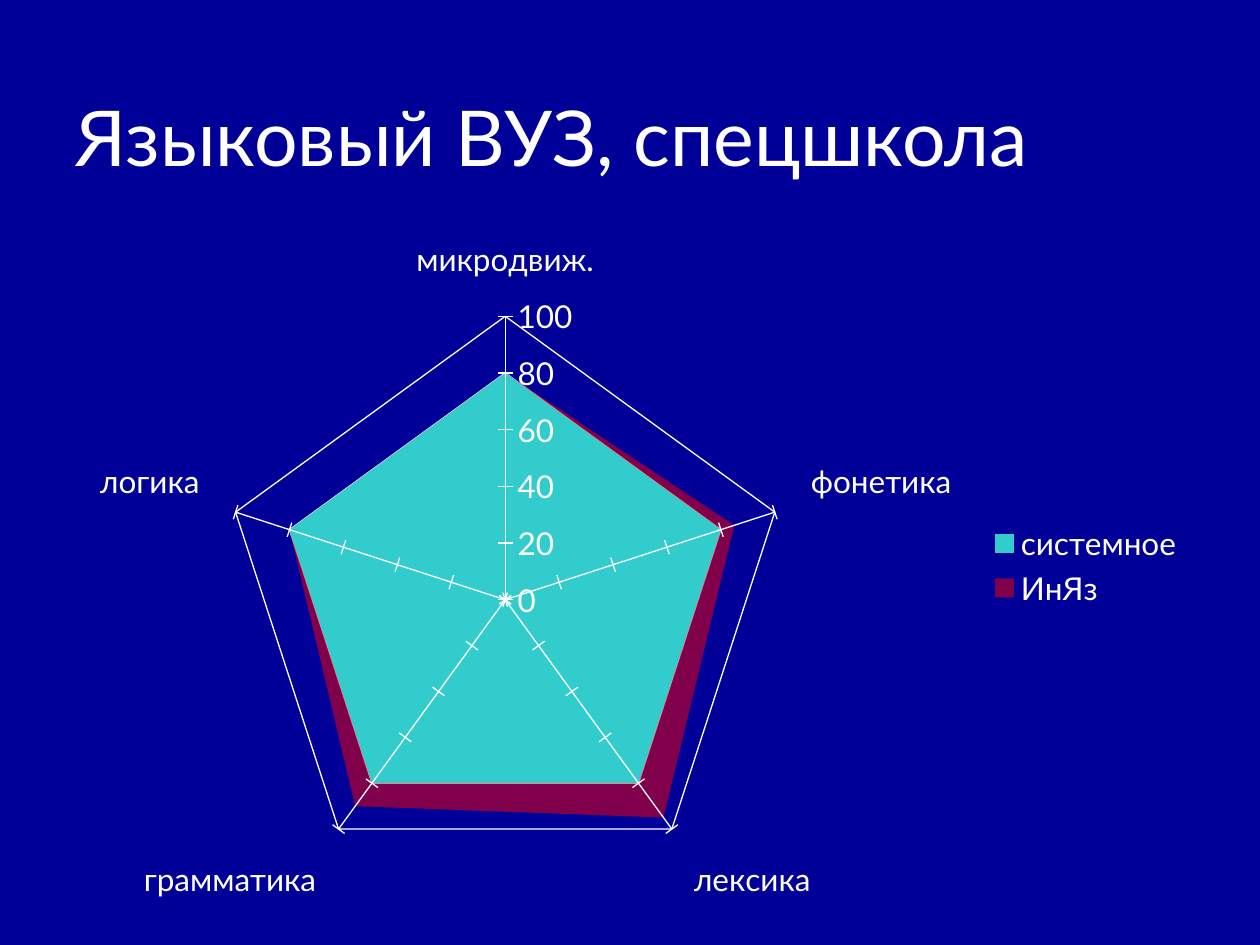
from lxml import etree
from pptx import Presentation
from pptx.chart.data import CategoryChartData
from pptx.dml.color import RGBColor
from pptx.enum.chart import XL_CHART_TYPE, XL_LEGEND_POSITION, XL_TICK_MARK
from pptx.enum.text import MSO_ANCHOR, PP_ALIGN
from pptx.oxml import parse_xml
from pptx.oxml.ns import nsdecls, qn
from pptx.util import Cm, Pt

NAVY = RGBColor(0x00, 0x00, 0x99)
WHITE = RGBColor(0xFF, 0xFF, 0xFF)
TEAL = RGBColor(0x33, 0xCC, 0xCC)
RED = RGBColor(0xFF, 0x00, 0x00)
FONT = "Lato"

CATEGORIES = ["микродвиж.", "фонетика", "лексика", "грамматика", "логика"]
# name, values, colour, opacity in percent
SERIES = [
    ("системное", (80, 80, 80, 80, 80), TEAL, 100),
    ("ИнЯз", (80, 85, 95, 90, 80), RED, 50),
]
PLOT_AREA = {"x": 0.14, "y": 0.17, "w": 0.5, "h": 0.75}


def set_font(font, size):
    for name, value in {"name": FONT, "size": Pt(size), "bold": False}.items():
        setattr(font, name, value)
    font.color.rgb = WHITE


def set_line(line):
    line.color.rgb = WHITE
    line.width = Pt(0.75)


def place(shape, box):
    for name, value in zip(("left", "top", "width", "height"), box):
        setattr(shape, name, value)


def add_title(s, box, text):
    title = s.shapes.title
    place(title, box)
    tf = title.text_frame
    tf.vertical_anchor = MSO_ANCHOR.MIDDLE
    p = tf.paragraphs[0]
    p.alignment = PP_ALIGN.LEFT
    r = p.add_run()
    r.text = text
    set_font(r.font, 44)


def set_plot_area(chart, area):
    """Fix the inner plot area as fractions of the chart."""
    plot_area = chart.plots[0]._element.getparent()
    for old in plot_area.findall(qn("c:layout")):
        plot_area.remove(old)
    edges = "".join(f'<c:{k} val="{v}"/>' for k, v in area.items())
    plot_area.insert(0, parse_xml(
        f'<c:layout {nsdecls("c")}><c:manualLayout>'
        '<c:layoutTarget val="inner"/><c:xMode val="edge"/><c:yMode val="edge"/>'
        f'{edges}</c:manualLayout></c:layout>'))


def add_radar(s, box):
    data = CategoryChartData(number_format="0")
    data.categories = CATEGORIES
    for name, values, _, _ in SERIES:
        data.add_series(name, values)
    chart = s.shapes.add_chart(XL_CHART_TYPE.RADAR_FILLED, *box, data).chart
    chart.has_title = False
    set_font(chart.font, 18)
    set_plot_area(chart, PLOT_AREA)

    # Series fills
    chart.plots[0].vary_by_categories = False
    for series, (_, _, colour, opacity) in zip(chart.plots[0].series, SERIES):
        fill = series.format.fill
        fill.solid()
        fill.fore_color.rgb = colour
        series.format.line.fill.background()
        if opacity < 100:
            clr = series._element.find(".//" + qn("a:srgbClr"))
            etree.SubElement(clr, qn("a:alpha"), val=str(opacity * 1000))

    # Axes and grid
    for axis in (chart.category_axis, chart.value_axis):
        axis.has_major_gridlines = True
        axis.major_tick_mark = XL_TICK_MARK.CROSS
        axis.minor_tick_mark = XL_TICK_MARK.NONE
        set_line(axis.format.line)
        set_line(axis.major_gridlines.format.line)
        set_font(axis.tick_labels.font, 18)
    scale = {"minimum_scale": 0, "maximum_scale": 100, "major_unit": 20}
    for name, value in scale.items():
        setattr(chart.value_axis, name, value)

    # Legend
    chart.has_legend = True
    chart.legend.position = XL_LEGEND_POSITION.RIGHT
    chart.legend.include_in_layout = False
    set_font(chart.legend.font, 18)


def main():
    prs = Presentation()
    prs.slide_width, prs.slide_height = Cm(25.4), Cm(19.05)
    s = prs.slides.add_slide(prs.slide_layouts[5])
    s.background.fill.solid()
    s.background.fill.fore_color.rgb = NAVY

    margin = Cm(1.27)
    width = prs.slide_width - 2 * margin
    chart_top = Cm(3.76)
    add_title(s, (margin, Cm(0.81), width, Cm(3.84)), "Языковый ВУЗ, спецшкола")
    add_radar(s, (margin, chart_top, width, prs.slide_height - chart_top))
    prs.save("out.pptx")


if __name__ == "__main__":
    main()
